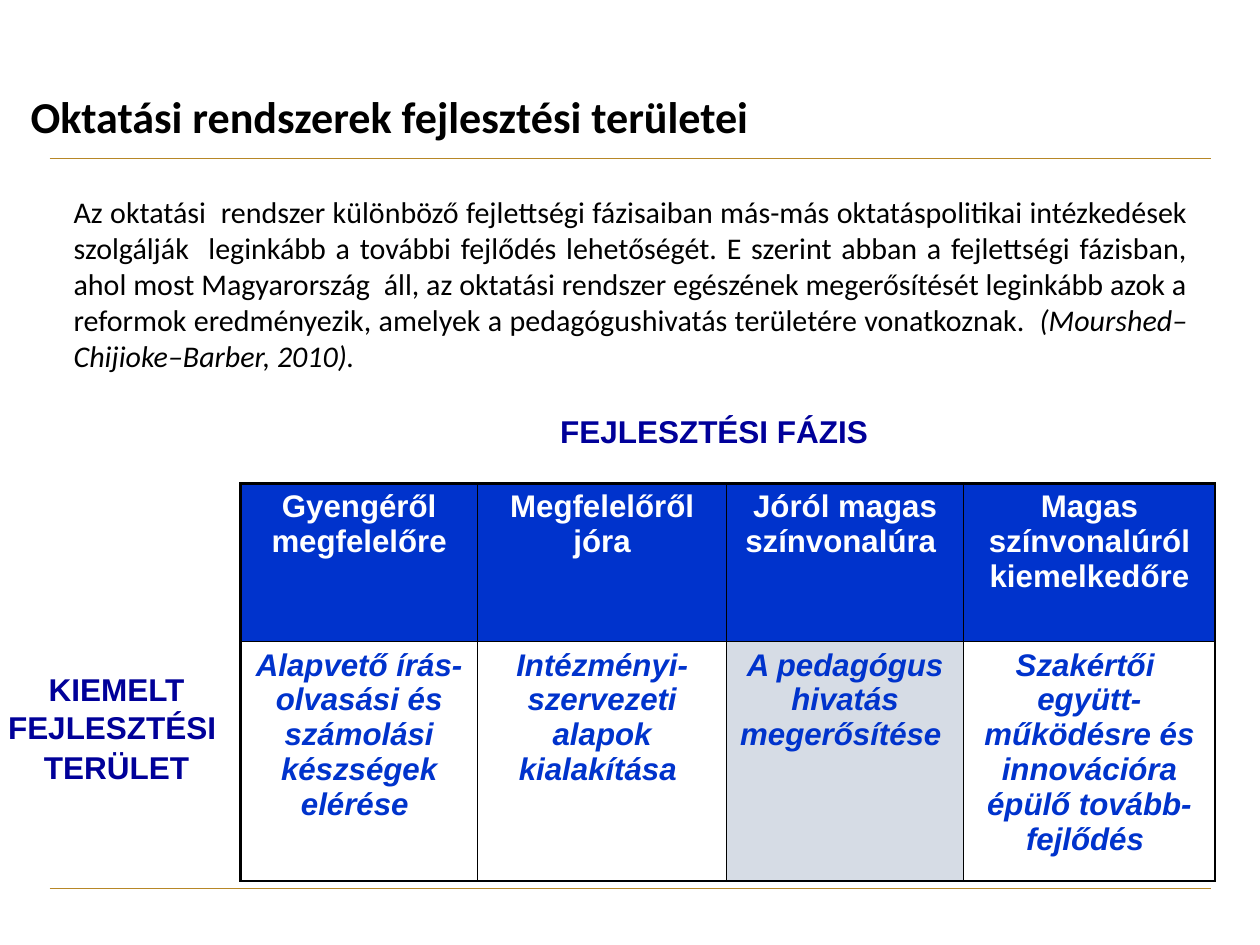
from lxml.etree import SubElement
from pptx import Presentation
from pptx.dml.color import RGBColor
from pptx.enum.shapes import MSO_CONNECTOR
from pptx.enum.text import MSO_ANCHOR, PP_ALIGN
from pptx.oxml.ns import qn
from pptx.util import Inches, Pt

TITLE = "Oktatási rendszerek fejlesztési területei"
INTRO = (
    "Az oktatási  rendszer különböző fejlettségi fázisaiban más-más oktatáspolitikai "
    "intézkedések szolgálják  leginkább a további fejlődés lehetőségét. E szerint abban a "
    "fejlettségi fázisban, ahol most Magyarország  áll, az oktatási rendszer egészének "
    "megerősítését leginkább azok a reformok eredményezik, amelyek a pedagógushivatás "
    "területére vonatkoznak.  "
)
CITATION = "(Mourshed–Chijioke–Barber, 2010)."
PHASE_LABEL = ["FEJLESZTÉSI FÁZIS"]
AREA_LABEL = ["KIEMELT", "FEJLESZTÉSI ", "TERÜLET"]
AREA_SPACING = [1, 0.5, 0.7]
ROWS = [
    ["Gyengéről megfelelőre", "Megfelelőről jóra", "Jóról magas színvonalúra ",
     "Magas színvonalúról kiemelkedőre"],
    ["Alapvető írás-olvasási és számolási készségek elérése ",
     "Intézményi- szervezeti alapok kialakítása ",
     "A pedagógus hivatás megerősítése ",
     "Szakértői  együtt-működésre és innovációra épülő tovább-fejlődés "],
]
COL_WIDTHS = [2.64, 2.76, 2.64, 2.79]
ROW_HEIGHTS = [1.76, 2.66]
HIGHLIGHT = (1, 2)

BLACK, WHITE, NAVY, BLUE = "000000", "FFFFFF", "000099", "0033CC"
GOLD, GREY = "B78727", "D6DCE5"


def rgb(value):
    return RGBColor.from_string(value)


def style(p, size, color, name="Arial", bold=True, italic=False):
    for r in p.runs:
        f = r.font
        f.size, f.name, f.bold, f.italic = Pt(size), name, bold, italic
        f.color.rgb = rgb(color)


def add_box(slide, x, y, w, h):
    tf = slide.shapes.add_textbox(Inches(x), Inches(y), Inches(w), Inches(h)).text_frame
    tf.word_wrap = True
    return tf


def add_rule(slide, y):
    line = slide.shapes.add_connector(
        MSO_CONNECTOR.STRAIGHT, Inches(0.55), Inches(y), Inches(13.45), Inches(y))
    line.line.color.rgb = rgb(GOLD)
    line.line.width = Pt(1)
    SubElement(line._element.spPr, qn("a:effectLst"))


def add_label(slide, lines, spacings, *place):
    tf = add_box(slide, *place)
    tf.text = "\n".join(lines)
    for i, (p, spacing) in enumerate(zip(tf.paragraphs, spacings)):
        p.alignment = PP_ALIGN.CENTER
        p.line_spacing = spacing
        if i:
            p.space_before = Pt(12.6)
        style(p, 25.2, NAVY)


def set_borders(cell, widths):
    """Draw the left, right, top and bottom borders, in that order."""
    tc_pr = cell._tc.get_or_add_tcPr()
    for side, width in zip("LRTB", widths):
        ln = SubElement(tc_pr, qn("a:ln" + side), w=str(Pt(width)))
        fill = SubElement(ln, qn("a:solidFill"))
        SubElement(fill, qn("a:srgbClr"), val=BLACK)


def add_phase_table(slide):
    n_rows, n_cols = len(ROWS), len(COL_WIDTHS)
    table = slide.shapes.add_table(
        n_rows, n_cols, Inches(2.67), Inches(5.37),
        Inches(sum(COL_WIDTHS)), Inches(sum(ROW_HEIGHTS))).table
    table.first_row = table.horz_banding = False
    for col, width in zip(table.columns, COL_WIDTHS):
        col.width = Inches(width)
    for i, height in enumerate(ROW_HEIGHTS):
        table.rows[i].height = Inches(height)
        for j, text in enumerate(ROWS[i]):
            cell = table.cell(i, j)
            outer = (j == 0, j == n_cols - 1, i == 0, i == n_rows - 1)
            set_borders(cell, [2.25 if edge else 1 for edge in outer])
            cell.fill.solid()
            body_fill = GREY if (i, j) == HIGHLIGHT else WHITE
            cell.fill.fore_color.rgb = rgb(body_fill if i else BLUE)
            cell.margin_left = cell.margin_right = Inches(0.14)
            cell.margin_top = cell.margin_bottom = Inches(0.07)
            cell.text = text
            p = cell.text_frame.paragraphs[0]
            p.alignment = PP_ALIGN.CENTER
            style(p, 25, BLUE if i else WHITE, italic=i > 0)


def main():
    prs = Presentation()
    prs.slide_width, prs.slide_height = Inches(14), Inches(10.5)
    slide = prs.slides.add_slide(prs.slide_layouts[6])

    for y in (1.76, 9.87):
        add_rule(slide, y)

    title = add_box(slide, 0.2, 0.88, 9.48, 0.88)
    title.vertical_anchor = MSO_ANCHOR.MIDDLE
    title.margin_left = title.margin_right = Inches(0.14)
    title.text = TITLE
    title.paragraphs[0].line_spacing = 0.9
    style(title.paragraphs[0], 35.3, BLACK, "Calibri")

    add_phase_table(slide)
    add_label(slide, PHASE_LABEL, [1], 2.59, 4.53, 10.69, 0.53)
    add_label(slide, AREA_LABEL, AREA_SPACING, -0.08, 7.4, 2.75, 1.46)

    p = add_box(slide, 0.72, 2.1, 12.57, 2.12).paragraphs[0]
    p.text = INTRO
    p.alignment = PP_ALIGN.JUSTIFY
    citation = p.add_run()
    citation.text = CITATION
    style(p, 24, BLACK, "Calibri", bold=False)
    citation.font.italic = True

    prs.save("out.pptx")


if __name__ == "__main__":
    main()
